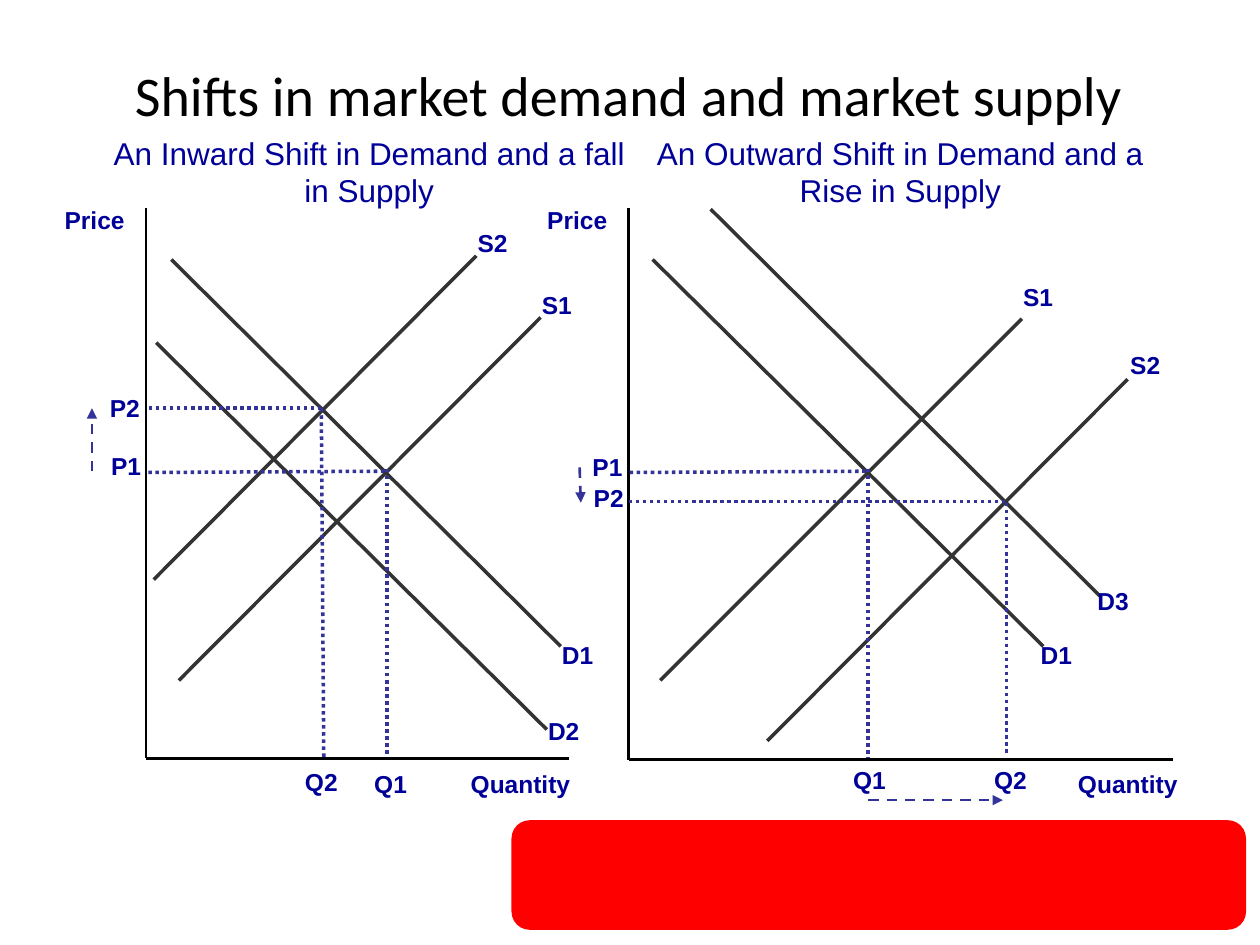
from lxml import etree
from pptx import Presentation
from pptx.dml.color import RGBColor
from pptx.enum.dml import MSO_LINE
from pptx.enum.shapes import MSO_CONNECTOR, MSO_SHAPE
from pptx.enum.text import MSO_ANCHOR, PP_ALIGN
from pptx.oxml.ns import qn
from pptx.util import Inches, Pt

STRAIGHT = MSO_CONNECTOR.STRAIGHT
ROUNDED = MSO_SHAPE.ROUNDED_RECTANGLE
DOT, DASH = MSO_LINE.ROUND_DOT, MSO_LINE.DASH
TOP, MIDDLE = MSO_ANCHOR.TOP, MSO_ANCHOR.MIDDLE
LEFT, CENTER, RIGHT = PP_ALIGN.LEFT, PP_ALIGN.CENTER, PP_ALIGN.RIGHT

BLACK = RGBColor(0x00, 0x00, 0x00)
NAVY = RGBColor(0x00, 0x00, 0x99)
INDIGO = RGBColor(0x33, 0x33, 0x99)
CHARCOAL = RGBColor(0x33, 0x33, 0x33)
RED = RGBColor(0xFF, 0x00, 0x00)

AXIS = {"color": BLACK, "width": 1.5}
CURVE = {"color": CHARCOAL, "width": 2}
GUIDE = {"color": INDIGO, "width": 2, "dash": DOT}
SHIFT = {"color": INDIGO, "width": 1.5, "dash": DASH, "arrow": True}

TITLE_FONT = {"name": "Calibri", "size": Pt(32), "bold": False}
HEADING_FONT = {"name": "Arial", "size": Pt(18), "bold": False}
LABEL_FONT = {"name": "Arial", "size": Pt(14), "bold": True}
INSETS = {"margin_left": Inches(0.09), "margin_right": Inches(0.09),
          "margin_top": Inches(0.04), "margin_bottom": Inches(0.04)}
LABEL_HEIGHT = 0.32

INWARD_SHIFT = {
    "heading": ("An Inward Shift in Demand and a fall in Supply", 0.77, 1.02, 4.32),
    "axes": [(1.16, 1.65, 1.16, 6.02), (1.16, 6.02, 4.52, 6.02)],
    "curves": [(1.36, 2.06, 4.45, 5.13), (4.29, 2.52, 1.42, 5.4),
               (1.24, 2.72, 4.34, 5.79), (3.78, 2.03, 1.22, 4.6)],
    "guides": [(3.05, 3.74, 1.16, 3.75), (3.07, 3.72, 3.07, 6.01),
               (2.55, 3.24, 1.17, 3.24), (2.55, 3.24, 2.57, 6.01)],
    "shifts": [(0.73, 3.74, 0.73, 3.24)],
    "axis_labels": [("Price", 0.35, 1.59, 0.73), ("Quantity ", 3.62, 6.06, 1.05),
                    ("P1", 0.72, 3.54, 0.49), ("P2", 0.72, 3.08, 0.48),
                    ("Q1", 2.74, 6.06, 0.58), ("Q2", 2.19, 6.05, 0.58)],
    "curve_labels": [("D1", 4.37, 5.04, 0.53), ("S1", 4.21, 2.26, 0.54),
                     ("D2", 4.26, 5.64, 0.53), ("S2", 3.7, 1.77, 0.54)],
}
OUTWARD_SHIFT = {
    "heading": ("An Outward Shift in Demand and a Rise in Supply", 4.98, 1.02, 4.33),
    "axes": [(4.99, 1.65, 4.99, 6.03), (4.99, 6.03, 9.31, 6.03)],
    "curves": [(5.18, 2.06, 8.28, 5.13), (8.11, 2.53, 5.24, 5.4),
               (5.64, 1.66, 8.74, 4.74), (8.95, 3.01, 6.09, 5.88)],
    "guides": [(6.87, 3.74, 4.99, 3.75), (6.89, 3.72, 6.89, 6.02),
               (7.98, 3.98, 4.97, 3.98), (7.99, 3.99, 7.99, 6)],
    "shifts": [(6.89, 6.35, 7.96, 6.35), (4.6, 3.71, 4.61, 3.99)],
    "axis_labels": [("Price", 4.18, 1.59, 0.73), ("Quantity ", 8.44, 6.06, 1.05),
                    ("P1", 4.54, 3.55, 0.49), ("P2", 4.55, 3.79, 0.49),
                    ("Q1", 6.54, 6.03, 0.58), ("Q2", 7.65, 6.03, 0.59)],
    "curve_labels": [("D1", 8.17, 5.04, 0.53), ("S1", 8.03, 2.2, 0.55),
                     ("D3", 8.62, 4.61, 0.53), ("S2", 8.88, 2.74, 0.54)],
}


def add_line(s, ends, color, width, dash=None, arrow=False):
    """Draw a straight line, optionally dashed and with an arrowhead at its end."""
    line = s.shapes.add_connector(STRAIGHT, *(Inches(v) for v in ends))
    line.line.color.rgb = color
    line.line.width = Pt(width)
    if dash is not None:
        line.line.dash_style = dash
    if arrow:
        etree.SubElement(line.line._get_or_add_ln(), qn("a:tailEnd"), type="triangle")
    etree.SubElement(line._element.spPr, qn("a:effectLst"))


def add_text(s, text, left, top, width, height=LABEL_HEIGHT, align=LEFT,
             font=LABEL_FONT, color=NAVY, anchor=TOP):
    """Add a wrapped one-paragraph text box."""
    sp = s.shapes.add_textbox(*(Inches(v) for v in (left, top, width, height)))
    tf = sp.text_frame
    for name, value in {**INSETS, "word_wrap": True, "vertical_anchor": anchor}.items():
        setattr(tf, name, value)
    p = tf.paragraphs[0]
    p.alignment = align
    r = p.add_run()
    r.text = text
    for name, value in font.items():
        setattr(r.font, name, value)
    r.font.color.rgb = color


def add_banner(s):
    """Add the plain red rounded panel at the bottom right."""
    sp = s.shapes.add_shape(ROUNDED, Inches(4.06), Inches(6.51), Inches(5.83), Inches(0.87))
    sp.shadow.inherit = False
    sp.fill.solid()
    sp.fill.fore_color.rgb = RED
    sp.line.fill.background()


def add_diagram(s, diagram):
    """Draw one supply and demand diagram with its heading and labels."""
    for kind, style in (("axes", AXIS), ("curves", CURVE),
                        ("guides", GUIDE), ("shifts", SHIFT)):
        for ends in diagram[kind]:
            add_line(s, ends, **style)
    for kind, align in (("axis_labels", RIGHT), ("curve_labels", LEFT)):
        for label in diagram[kind]:
            add_text(s, *label, align=align)
    add_text(s, *diagram["heading"], height=0.69, align=CENTER, font=HEADING_FONT)


def main():
    """Build the slide and save it."""
    prs = Presentation()
    prs.slide_width, prs.slide_height = Inches(10), Inches(7.5)
    s = prs.slides.add_slide(prs.slide_layouts[6])
    add_banner(s)
    add_text(s, "Shifts in market demand and market supply", 0.49, 0.12, 9, 1.25,
             CENTER, TITLE_FONT, BLACK, MIDDLE)
    for diagram in (INWARD_SHIFT, OUTWARD_SHIFT):
        add_diagram(s, diagram)
    prs.save("out.pptx")


if __name__ == "__main__":
    main()
